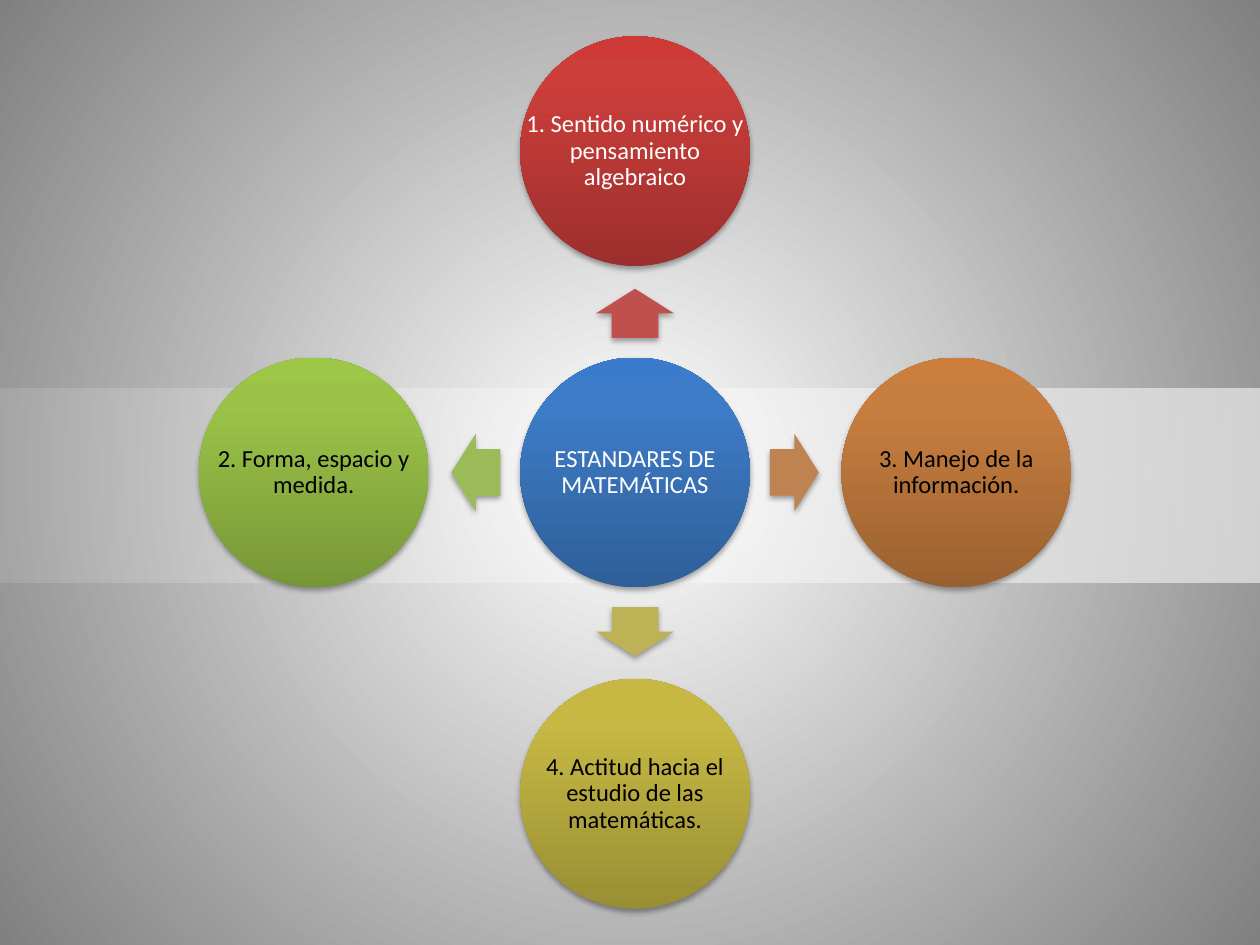
from pptx import Presentation
from pptx.dml.color import RGBColor
from pptx.enum.shapes import MSO_SHAPE
from pptx.enum.text import MSO_ANCHOR, PP_ALIGN
from pptx.oxml import parse_xml
from pptx.oxml.ns import nsdecls, qn
from pptx.util import Pt

RECTANGLE = MSO_SHAPE.RECTANGLE
OVAL = MSO_SHAPE.OVAL
RIGHT_ARROW = MSO_SHAPE.RIGHT_ARROW
MIDDLE = MSO_ANCHOR.MIDDLE
CENTER = PP_ALIGN.CENTER

WHITE = RGBColor(0xFF, 0xFF, 0xFF)
BLACK = RGBColor(0x00, 0x00, 0x00)
GRAY = RGBColor(0x80, 0x80, 0x80)
BLUES = (RGBColor(0x2F, 0x5F, 0x99), RGBColor(0x3D, 0x7C, 0xC7), RGBColor(0x3A, 0x7C, 0xCB))
REDS = (RGBColor(0x9C, 0x2F, 0x2D), RGBColor(0xCB, 0x3E, 0x3A), RGBColor(0xCE, 0x3B, 0x37))
ORANGES = (RGBColor(0x9A, 0x61, 0x30), RGBColor(0xC8, 0x7E, 0x3F), RGBColor(0xCC, 0x7E, 0x3C))
YELLOWS = (RGBColor(0x98, 0x8E, 0x34), RGBColor(0xC6, 0xB8, 0x43), RGBColor(0xC9, 0xBB, 0x41))
GREENS = (RGBColor(0x77, 0x97, 0x37), RGBColor(0x9B, 0xC3, 0x48), RGBColor(0x9D, 0xC7, 0x46))
RED_ARROW = RGBColor(0xC0, 0x50, 0x4D)
ORANGE_ARROW = RGBColor(0xBE, 0x83, 0x51)
YELLOW_ARROW = RGBColor(0xBD, 0xB2, 0x55)
GREEN_ARROW = RGBColor(0x9B, 0xBB, 0x59)

SLIDE_WIDTH, SLIDE_HEIGHT = 720, 540
CENTER_X, CENTER_Y = 362.9, 270
DIAMETER = 131.3
CIRCLE_DISTANCE = 183.6
ARROW_DISTANCE = 91
ARROW_LENGTH, ARROW_BREADTH = 28, 44.4

STANDARDS = [
    ("1. Sentido numérico y pensamiento algebraico", 0, -1, 270, REDS, RED_ARROW, WHITE),
    ("3. Manejo de la información.", 1, 0, 0, ORANGES, ORANGE_ARROW, BLACK),
    ("4. Actitud hacia el estudio de las matemáticas.", 0, 1, 90, YELLOWS, YELLOW_ARROW, BLACK),
    ("2. Forma, espacio y medida.", -1, 0, 180, GREENS, GREEN_ARROW, BLACK),
]


def set_gradient(owner, element, stops, direction):
    owner.fill.solid()
    solid = next(element.iter(qn("a:solidFill")))
    stop_list = "".join(
        f'<a:gs pos="{position * 1000}"><a:srgbClr val="{color}">'
        f'<a:alpha val="{opacity * 1000}"/></a:srgbClr></a:gs>'
        for position, color, opacity in stops
    )
    gradient = parse_xml(
        f'<a:gradFill {nsdecls("a")} rotWithShape="1">'
        f"<a:gsLst>{stop_list}</a:gsLst>{direction}</a:gradFill>"
    )
    solid.getparent().replace(solid, gradient)


def linear(degrees):
    return f'<a:lin ang="{degrees * 60000}" scaled="0"/>'


def add_plain_shape(slide, kind, left, top, width, height):
    shape = slide.shapes.add_shape(kind, Pt(left), Pt(top), Pt(width), Pt(height))
    shape.line.fill.background()
    shape.shadow.inherit = False
    return shape


def add_shadow(shape):
    effects = shape.element.spPr.find(qn("a:effectLst"))
    effects.append(parse_xml(
        f'<a:outerShdw {nsdecls("a")} blurRad="{Pt(3.15)}" dist="{Pt(1.8)}" '
        'dir="5400000" rotWithShape="0"><a:srgbClr val="000000">'
        '<a:alpha val="35000"/></a:srgbClr></a:outerShdw>'
    ))


def add_background(slide):
    set_gradient(
        slide.background, slide.element, [(0, WHITE, 100), (100, GRAY, 100)],
        '<a:path path="circle"><a:fillToRect l="50000" t="50000" r="50000" b="50000"/></a:path>',
    )


def add_band(slide):
    band = add_plain_shape(slide, RECTANGLE, 0, 222, SLIDE_WIDTH, 111)
    set_gradient(band, band.element, [(0, WHITE, 12), (100, WHITE, 57)], linear(0))


def add_circle(slide, text, x, y, shades, text_color):
    left, top = x - DIAMETER / 2, y - DIAMETER / 2
    circle = add_plain_shape(slide, OVAL, left, top, DIAMETER, DIAMETER)
    stops = [(position, shade, 100) for position, shade in zip((0, 80, 100), shades)]
    set_gradient(circle, circle.element, stops, linear(270))
    add_shadow(circle)

    label = slide.shapes.add_textbox(Pt(left), Pt(top), Pt(DIAMETER), Pt(DIAMETER))
    frame = label.text_frame
    frame.word_wrap = True
    frame.vertical_anchor = MIDDLE
    frame.margin_left = frame.margin_right = Pt(1.4)
    frame.margin_top = frame.margin_bottom = Pt(1.4)
    paragraph = frame.paragraphs[0]
    paragraph.text = text
    paragraph.alignment = CENTER
    paragraph.line_spacing = 0.9
    paragraph.space_after = Pt(4.9)
    paragraph.font.name = "Calibri"
    paragraph.font.size = Pt(14)
    paragraph.font.color.rgb = text_color


def add_arrow(slide, x, y, rotation, color):
    arrow = add_plain_shape(
        slide, RIGHT_ARROW, x - ARROW_LENGTH / 2, y - ARROW_BREADTH / 2,
        ARROW_LENGTH, ARROW_BREADTH,
    )
    arrow.adjustments[0] = 0.6
    arrow.adjustments[1] = 0.5
    arrow.rotation = rotation
    arrow.fill.solid()
    arrow.fill.fore_color.rgb = color
    add_shadow(arrow)


def main():
    presentation = Presentation()
    presentation.slide_width = Pt(SLIDE_WIDTH)
    presentation.slide_height = Pt(SLIDE_HEIGHT)
    slide = presentation.slides.add_slide(presentation.slide_layouts[6])
    add_background(slide)
    add_band(slide)
    add_circle(slide, "ESTANDARES DE MATEMÁTICAS", CENTER_X, CENTER_Y, BLUES, WHITE)
    for text, dx, dy, rotation, shades, arrow_color, text_color in STANDARDS:
        add_arrow(slide, CENTER_X + dx * ARROW_DISTANCE, CENTER_Y + dy * ARROW_DISTANCE,
                  rotation, arrow_color)
        add_circle(slide, text, CENTER_X + dx * CIRCLE_DISTANCE,
                   CENTER_Y + dy * CIRCLE_DISTANCE, shades, text_color)
    presentation.save("out.pptx")


if __name__ == "__main__":
    main()
